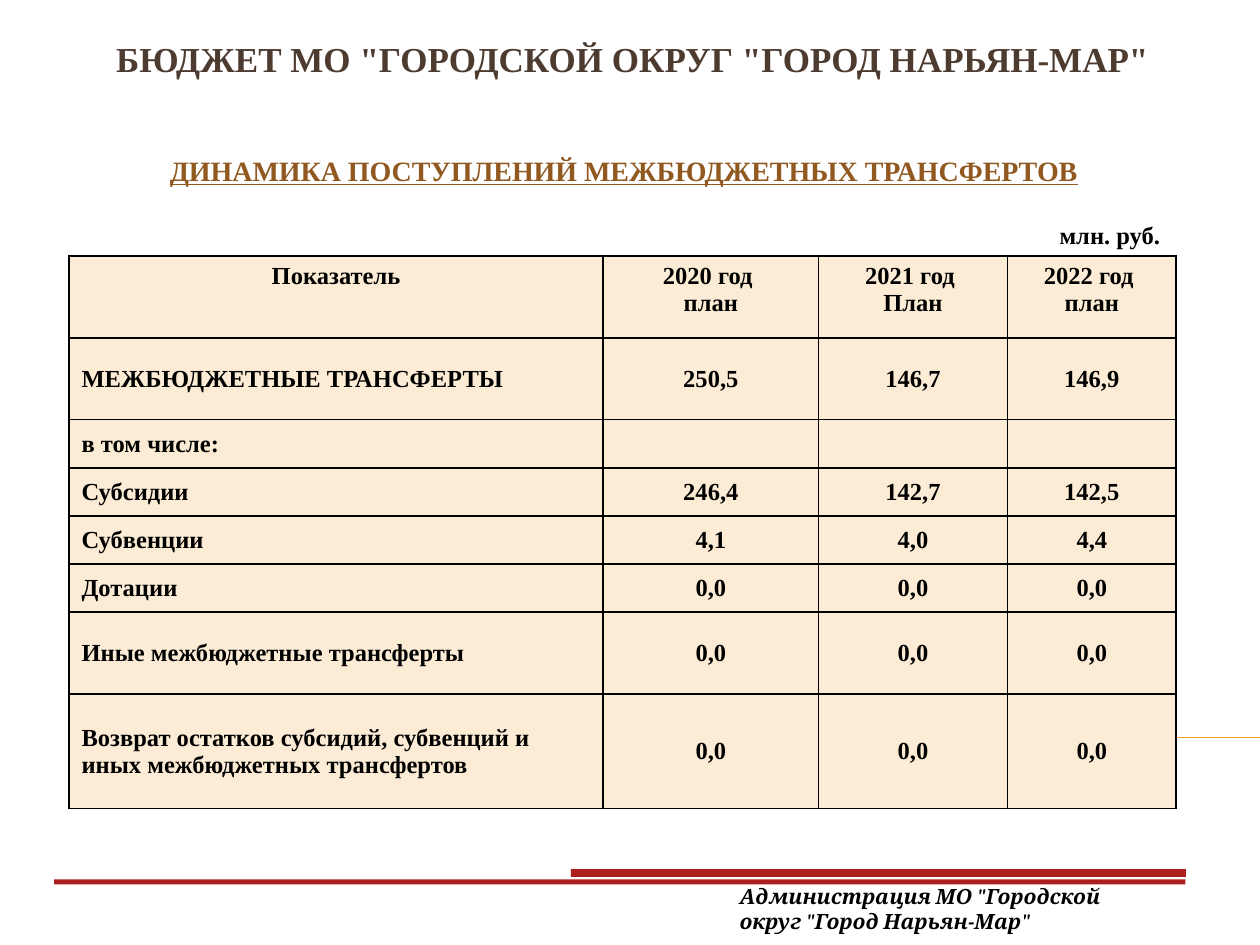
from lxml.etree import SubElement
from pptx import Presentation
from pptx.dml.color import RGBColor
from pptx.enum.shapes import MSO_CONNECTOR, MSO_SHAPE
from pptx.enum.text import MSO_ANCHOR, PP_ALIGN
from pptx.oxml.ns import qn
from pptx.util import Cm, Pt

# Content
SERIF = "Times New Roman"
BLACK, CREAM, RED, ORANGE = "000000", "FCECD5", "AD1F1F", "F0A22E"

# text, (left, top, width, height) in cm, alignment, font settings
CAPTIONS = [
    ('БЮДЖЕТ МО "ГОРОДСКОЙ ОКРУГ "ГОРОД НАРЬЯН-МАР"', (1, 0.64, 23.5, 3.4),
     PP_ALIGN.CENTER, dict(size=20, color="4E3B30")),
    ("ДИНАМИКА ПОСТУПЛЕНИЙ МЕЖБЮДЖЕТНЫХ ТРАНСФЕРТОВ", (0.58, 2.97, 24, 1.19),
     PP_ALIGN.CENTER, dict(size=16, color="91581F", underline=True)),
    ("млн. руб.", (21.11, 4.32, 2.59, 0.86), PP_ALIGN.LEFT, dict(size=14)),
    ('Администрация МО "Городской округ "Город Нарьян-Мар"',
     (14.66, 17.68, 8.86, 1.27), PP_ALIGN.LEFT,
     dict(size=12, name="Cambria", italic=True)),
]
TRANSFERS = [
    ("Показатель", "2020 год \nплан", "2021 год \nПлан", "2022 год \nплан"),
    ("МЕЖБЮДЖЕТНЫЕ ТРАНСФЕРТЫ", "250,5", "146,7", "146,9"),
    ("в том числе:", "", "", ""),
    ("Субсидии", "246,4", "142,7", "142,5"),
    ("Субвенции", "4,1", "4,0", "4,4"),
    ("Дотации", "0,0", "0,0", "0,0"),
    ("Иные межбюджетные трансферты", "0,0", "0,0", "0,0"),
    ("Возврат остатков субсидий, субвенций и иных межбюджетных трансфертов",
     "0,0", "0,0", "0,0"),
]
COLUMN_WIDTHS = [10.77, 4.34, 3.81, 3.4]
ROW_HEIGHTS = [1.65, 1.65, 0.97, 0.97, 0.97, 0.97, 1.65, 2.31]
TABLE_LEFT, TABLE_TOP = 1.39, 5.16
FOOTER_BARS = [(11.51, 17.52, 12.4, 0.16), (1.09, 17.73, 22.81, 0.1)]


def rgb(value):
    return RGBColor.from_string(value)


def format_text(frame, align, size, color=BLACK, name=SERIF,
                italic=False, underline=False):
    for paragraph in frame.paragraphs:
        paragraph.alignment = align
        for run in paragraph.runs:
            font = run.font
            font.name, font.size, font.bold = name, Pt(size), True
            font.italic, font.underline = italic, underline
            font.color.rgb = rgb(color)


def add_borders(cell):
    properties = cell._tc.get_or_add_tcPr()
    for position, side in enumerate(("lnL", "lnR", "lnT", "lnB")):
        border = SubElement(properties, qn(f"a:{side}"), w=str(Pt(1)))
        fill = SubElement(border, qn("a:solidFill"))
        SubElement(fill, qn("a:srgbClr"), val=BLACK)
        properties.remove(border)
        properties.insert(position, border)  # borders precede the fill


presentation = Presentation()
presentation.slide_width, presentation.slide_height = Cm(25.4), Cm(19.05)
slide = presentation.slides.add_slide(presentation.slide_layouts[6])
shapes = slide.shapes

# Thin rule behind the table
rule = shapes.add_connector(MSO_CONNECTOR.STRAIGHT,
                            Cm(1.42), Cm(14.86), Cm(25.4), Cm(14.86))
rule.line.color.rgb = rgb(ORANGE)
rule.line.width = Pt(0.75)
SubElement(rule._element.spPr, qn("a:effectLst"))

# Table of transfers
table = shapes.add_table(
    len(ROW_HEIGHTS), len(COLUMN_WIDTHS), Cm(TABLE_LEFT), Cm(TABLE_TOP),
    Cm(sum(COLUMN_WIDTHS)), Cm(sum(ROW_HEIGHTS))).table
for column, width in zip(table.columns, COLUMN_WIDTHS):
    column.width = Cm(width)
for row, height in zip(table.rows, ROW_HEIGHTS):
    row.height = Cm(height)
for r, record in enumerate(TRANSFERS):
    for c, value in enumerate(record):
        cell = table.cell(r, c)
        cell.text_frame.text = value
        cell.fill.solid()
        cell.fill.fore_color.rgb = rgb(CREAM)
        add_borders(cell)
        if r > 0:
            cell.vertical_anchor = MSO_ANCHOR.MIDDLE
            cell.margin_top = cell.margin_bottom = 0
        label = r > 0 and c == 0
        format_text(cell.text_frame,
                    PP_ALIGN.LEFT if label else PP_ALIGN.CENTER, size=14)

# Footer bars
for box in FOOTER_BARS:
    bar = shapes.add_shape(MSO_SHAPE.RECTANGLE, *map(Cm, box))
    bar.shadow.inherit = False
    bar.fill.solid()
    bar.fill.fore_color.rgb = rgb(RED)
    bar.line.fill.background()

# Headings, unit and footer text
for text, box, align, style in CAPTIONS:
    frame = shapes.add_textbox(*map(Cm, box)).text_frame
    frame.word_wrap = True
    frame.text = text
    format_text(frame, align, **style)

presentation.save("out.pptx")
